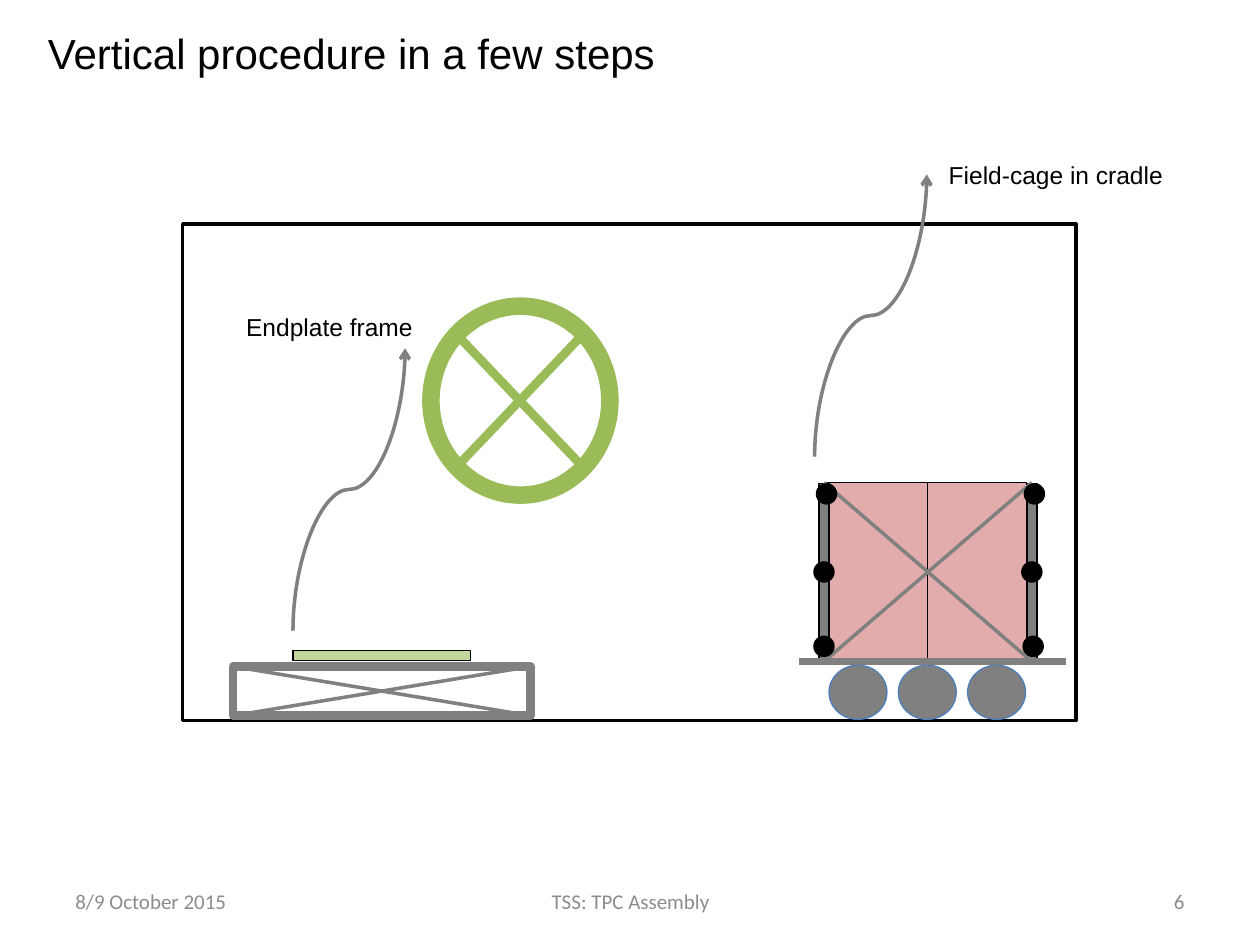
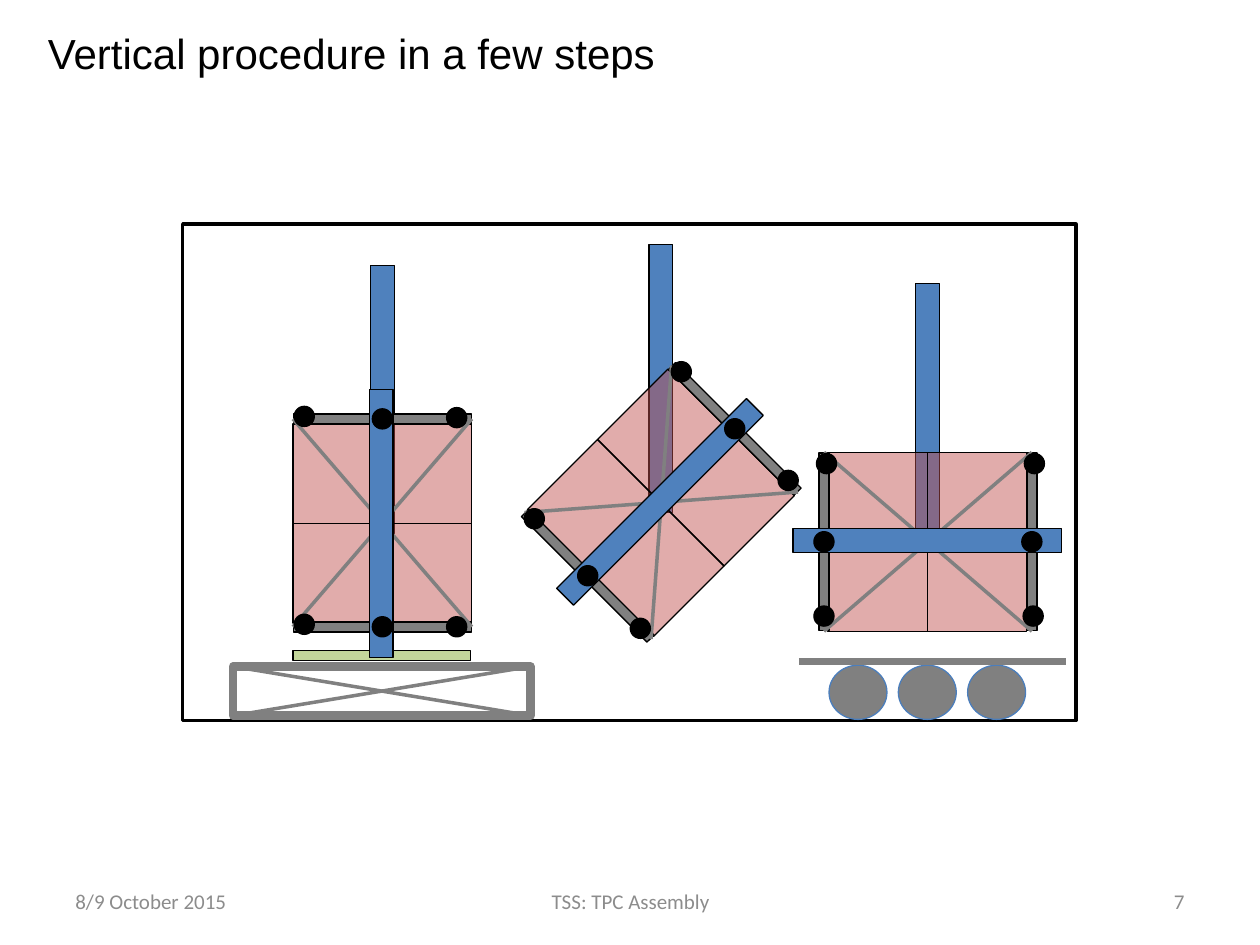
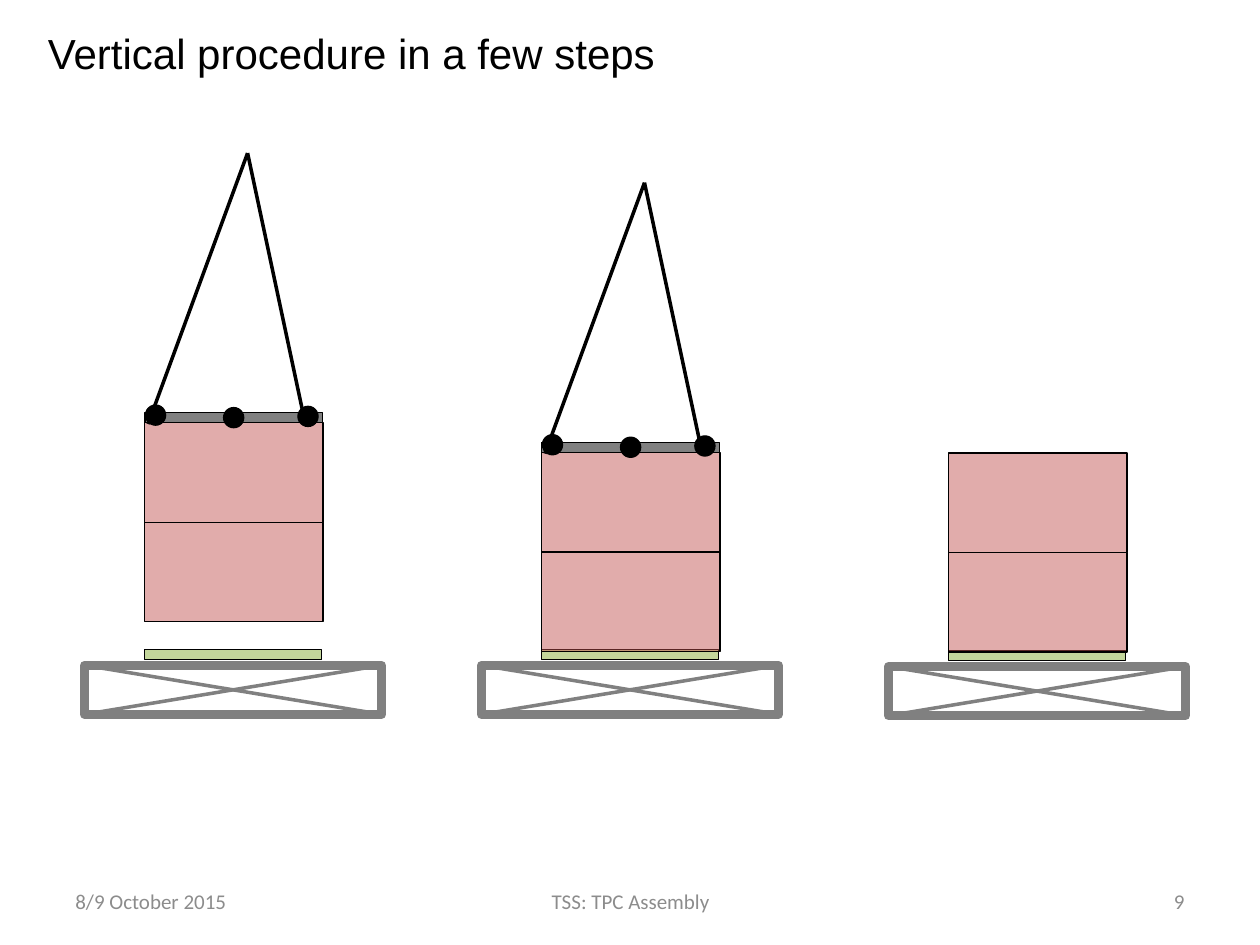
"""Build three slides on the vertical assembly procedure."""
import math
from dataclasses import dataclass

from lxml import etree
from pptx import Presentation
from pptx.dml.color import RGBColor
from pptx.enum import shapes, text
from pptx.oxml import ns
from pptx.util import Pt

PX = 9144


@dataclass(frozen=True)
class Theme:
    black: str = "000000"
    white: str = "FFFFFF"
    grey: str = "808080"
    footer: str = "8C8C8C"
    cage: str = "C0504D"
    beam: str = "4F81BD"
    wheel_edge: str = "4B7EBC"
    plate: str = "C3D69B"
    endplate: str = "9BBB59"
    cage_alpha: str = "47000"
    heading_font: str = "Arial"
    footer_font: str = "Calibri"
    title_size: int = 24
    label_size: int = 14
    footer_size: int = 12


theme = Theme()
RECT = shapes.MSO_SHAPE.RECTANGLE
OVAL = shapes.MSO_SHAPE.OVAL
LEFT, CENTRE, RIGHT = text.PP_ALIGN.LEFT, text.PP_ALIGN.CENTER, text.PP_ALIGN.RIGHT


def add_part(page, kind, centre, width, height, fill, edge=theme.black, weight=0.75, angle=0):
    """Add a preset shape around a centre given as x + yj."""
    left, top = centre.real - width / 2, centre.imag - height / 2
    part = page.shapes.add_shape(kind, *(int(v * PX) for v in (left, top, width, height)))
    part.rotation = angle
    part.shadow.inherit = False
    if fill:
        part.fill.solid()
        part.fill.fore_color.rgb = RGBColor.from_string(fill)
    else:
        part.fill.background()
    part.line.color.rgb = RGBColor.from_string(edge)
    part.line.width = Pt(weight)
    return part


def add_line(page, start, end, colour=theme.grey, weight=2, kind=shapes.MSO_CONNECTOR.STRAIGHT):
    """Add a connector between two points given as x + yj."""
    ends = (start.real, start.imag, end.real, end.imag)
    line = page.shapes.add_connector(kind, *(int(v * PX) for v in ends))
    line.line.color.rgb = RGBColor.from_string(colour)
    line.line.width = Pt(weight)
    etree.SubElement(line._element.spPr, ns.qn("a:effectLst"))
    return line


deck = Presentation()
deck.slide_width, deck.slide_height = 1000 * PX, 750 * PX

pages = []
for number in ("6", "7", "9"):
    page = deck.slides.add_slide(deck.slide_layouts[5])
    pages.append(page)
    title = page.shapes.title
    title.left, title.top, title.width, title.height = (v * PX for v in (28, 17, 507, 50))
    title.text = "Vertical procedure in a few steps"
    title.text_frame.word_wrap = False
    title.text_frame.auto_size = text.MSO_AUTO_SIZE.NONE
    title.text_frame.vertical_anchor = text.MSO_ANCHOR.TOP
    para = title.text_frame.paragraphs[0]
    para.alignment = LEFT
    para.font.name, para.font.size = theme.heading_font, Pt(theme.title_size)
    para.font.color.rgb = RGBColor.from_string(theme.black)

    for words, left, width, align in (
        ("8/9 October 2015", 50, 233, LEFT),
        ("TSS: TPC Assembly", 342, 317, CENTRE),
        (number, 717, 233, RIGHT),
    ):
        box = page.shapes.add_textbox(left * PX, 695 * PX, width * PX, 40 * PX)
        box.text_frame.word_wrap = True
        box.text_frame.vertical_anchor = text.MSO_ANCHOR.MIDDLE
        para = box.text_frame.paragraphs[0]
        para.text, para.alignment = words, align
        para.font.name, para.font.size = theme.footer_font, Pt(theme.footer_size)
        para.font.color.rgb = RGBColor.from_string(theme.footer)

delivery, rotation, lowering = pages

for page in (delivery, rotation):
    add_part(page, RECT, 499.5 + 375j, 709, 394, None, weight=2)

stands = [
    (delivery, 303 + 529j), (rotation, 303 + 529j),
    (lowering, 185 + 528j), (lowering, 500 + 528j), (lowering, 823 + 529j),
]
for page, top in stands:
    add_part(page, RECT, top + 19.5j, 236, 39, theme.white, theme.grey, 5)
    add_line(page, top - 118, top + 118 + 39j)
    add_line(page, top - 118 + 39j, top + 118)
    add_part(page, RECT, top - 8.5j, 141, 8, theme.plate)

rail_dots = {
    83: (84 + 59j, 85 - 62j, 83 + 0j),
    -82: (-82 + 59j, -80 - 62j, -82 + 0j),
}
both_rails, top_rail, no_rails = (83, -82), (83,), ()
cages = [
    (delivery, 736 + 454j, 0, both_rails, False),
    (rotation, 736 + 430j, 0, both_rails, True),
    (rotation, 524.5 + 399j, 315, both_rails, True),
    (rotation, 303.5 + 415.5j, 270, both_rails, True),
    (lowering, 185.5 + 414.5j, 270, top_rail, False),
    (lowering, 500.5 + 438j, 270, top_rail, False),
    (lowering, 823.5 + 438.5j, 270, no_rails, False),
]
for page, centre, angle, rails, lifted in cages:
    turn = complex(math.cos(math.radians(angle)), math.sin(math.radians(angle)))
    if lifted:
        add_part(page, RECT, centre - 98.5j, 19, 213, theme.beam)
    for offset in (-39.5, 39.5):
        half = add_part(page, RECT, centre + turn * offset, 79, 142, theme.cage, angle=angle)
        colour = half.fill._xPr.find(".//" + ns.qn("a:srgbClr"))
        etree.SubElement(colour, ns.qn("a:alpha"), val=theme.cage_alpha)
    for rail in rails:
        add_part(page, RECT, centre + turn * rail, 8, 141, theme.grey, angle=angle)
    if rails == both_rails:
        for rise in (71j, -71j):
            add_line(page, centre + turn * (-82 - rise), centre + turn * (83 + rise))
    if lifted:
        add_part(page, RECT, centre - turn * 1j, 213, 19, theme.beam, angle=angle)
    for rail in rails:
        for dot in rail_dots[rail]:
            add_part(page, OVAL, centre + turn * dot, 16, 16, theme.black)
    if rails == top_rail:
        for hook in (-68 - 78j, 56 - 82j):
            add_line(page, centre + hook, centre + 11 - 293j, theme.black)

for page in (delivery, rotation):
    for wheel in range(3):
        add_part(page, OVAL, 681 + 55 * wheel + 549.5j, 46, 43, theme.grey, theme.wheel_edge)
    add_line(page, 634 + 525j, 846 + 525j, weight=4.5)

add_part(delivery, OVAL, 413 + 318j, 142, 150, None, theme.endplate, 10)
for rise in (53j, -53j):
    add_line(delivery, 362 + 318j - rise, 463 + 318j + rise, theme.endplate, 5)

for corner in (165 + 344j, 579 + 206j):
    arrow = add_line(delivery, corner + 224 + 89j, corner, kind=shapes.MSO_CONNECTOR.CURVE)
    arrow._element.spPr.xfrm.set("rot", "5400000")
    etree.SubElement(arrow.get_or_add_ln(), ns.qn("a:tailEnd"), type="arrow")

for words, left, top, width in (
    ("Endplate frame", 185, 243, 153),
    ("Field-cage in cradle", 742, 122, 192),
):
    box = delivery.shapes.add_textbox(left * PX, top * PX, width * PX, 34 * PX)
    box.text_frame.word_wrap = False
    box.text_frame.auto_size = text.MSO_AUTO_SIZE.SHAPE_TO_FIT_TEXT
    para = box.text_frame.paragraphs[0]
    para.text, para.alignment = words, CENTRE
    para.font.name, para.font.size = theme.heading_font, Pt(theme.label_size)
    para.font.color.rgb = RGBColor.from_string(theme.black)

deck.save("out.pptx")
